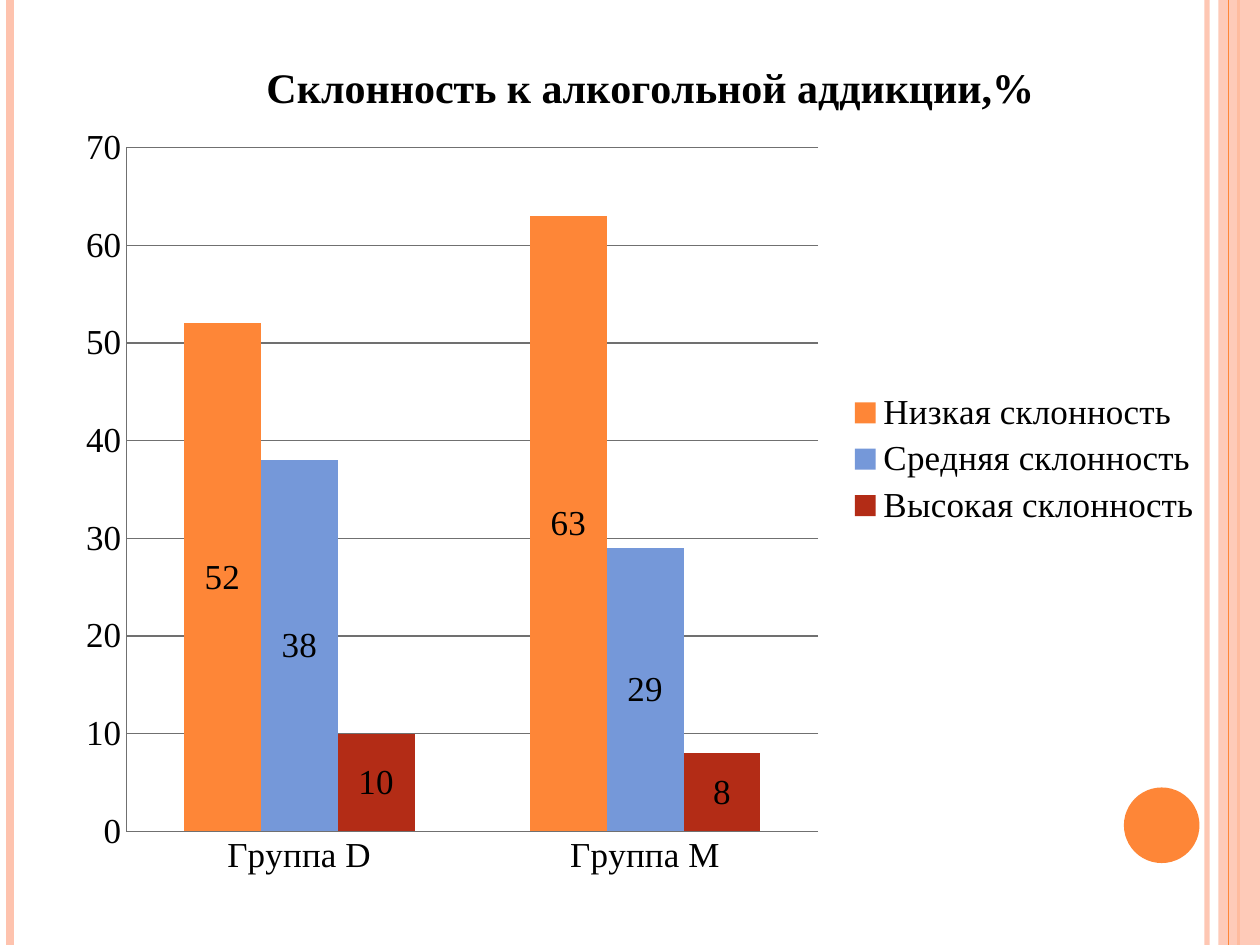
from lxml.etree import SubElement as Sub
from pptx import Presentation
from pptx.chart.data import CategoryChartData as Data
from pptx.dml.color import RGBColor
from pptx.enum.chart import XL_CHART_TYPE as Kind, XL_LABEL_POSITION as Pos
from pptx.enum.chart import XL_LEGEND_POSITION as Side, XL_TICK_MARK as Tick
from pptx.enum.shapes import MSO_CONNECTOR as Link, MSO_SHAPE as Form
from pptx.oxml import parse_xml
from pptx.oxml.ns import nsdecls, qn
from pptx.util import Inches, Pt

PEACH = RGBColor(0xFE, 0xC3, 0xAE)
ORANGE = RGBColor(0xFE, 0x86, 0x37)
BLUE = RGBColor(0x75, 0x98, 0xD9)
RED = RGBColor(0xB3, 0x2C, 0x16)
BLACK = RGBColor(0, 0, 0)
GREY = RGBColor(0x70, 0x70, 0x70)
FACE = "Times New Roman"


def style(font, size=20, bold=False):
    font.name, font.size, font.bold = FACE, Pt(size), bold
    font.color.rgb = BLACK


def fade(fill, share):
    color = fill._xPr.find(qn("a:solidFill"))[0]
    Sub(color, qn("a:alpha"), val=str(share * 1000))


deck = Presentation()
deck.slide_width, deck.slide_height = Inches(10), Inches(7.5)
wide, high = deck.slide_width, deck.slide_height
slide = deck.slides.add_slide(deck.slide_layouts[6])
shapes = slide.shapes

bars = [
    (0.958, PEACH, 3, 93),
    (0.008, PEACH, 4.5, 100),
    (0.983, ORANGE, 1.5, 100),
    (0.975, ORANGE, 0.75, 100),
]
for share, color, width, alpha in bars:
    if share == 0.975:
        band = shapes.add_shape(Form.RECTANGLE, int(wide * 0.967), 0, int(wide * 0.033), high)
        band.shadow.inherit = False
        band.fill.solid()
        band.fill.fore_color.rgb = PEACH
        fade(band.fill, 87)
        band.line.fill.background()
    left = int(wide * share)
    bar = shapes.add_connector(Link.STRAIGHT, left, 0, left, high)
    bar.line.color.rgb = color
    bar.line.width = Pt(width)
    if alpha < 100:
        fade(bar.line.fill, alpha)
    Sub(bar._element.spPr, qn("a:effectLst"))

dot = shapes.add_shape(Form.OVAL, Inches(8.92), Inches(6.25), Inches(0.6), Inches(0.6))
dot.shadow.inherit = False
dot.fill.solid()
dot.fill.fore_color.rgb = ORANGE
dot.line.fill.background()

rows = [
    ("Низкая склонность", (52, 63), ORANGE),
    ("Средняя склонность", (38, 29), BLUE),
    ("Высокая склонность", (10, 8), RED),
]
data = Data()
data.categories = ["Группа D", "Группа M"]
for name, vals, color in rows:
    data.add_series(name, vals)
chart = shapes.add_chart(
    Kind.COLUMN_CLUSTERED, Inches(0.5), Inches(0.21), Inches(9.15), Inches(6.87), data
).chart
chart.font.name, chart.font.size = "Cambria", Pt(10)
chart.font.color.rgb = BLACK

chart.has_title = True
run = chart.chart_title.text_frame.paragraphs[0].add_run()
run.text = "Склонность к алкогольной аддикции,%"
style(run.font, 24, True)
chart.chart_title.include_in_layout = False

chart.has_legend = True
chart.legend.position = Side.RIGHT
chart.legend.include_in_layout = False
style(chart.legend.font)

for axis in (chart.category_axis, chart.value_axis):
    axis.major_tick_mark = axis.minor_tick_mark = Tick.NONE
    axis.format.line.color.rgb = GREY
    axis.format.line.width = Pt(0.75)
    style(axis.tick_labels.font)
scale = chart.value_axis
scale.minimum_scale, scale.maximum_scale, scale.major_unit = 0, 70, 10
grid = scale.major_gridlines.format.line
grid.color.rgb = GREY
grid.width = Pt(0.75)

plot = chart.plots[0]
plot.gap_width, plot.overlap = 150, 0
plot.vary_by_categories = False
for item, (name, vals, color) in zip(plot.series, rows):
    item.format.fill.solid()
    item.format.fill.fore_color.rgb = color
    tags = item.data_labels
    tags.show_value = True
    tags.position = Pos.CENTER
    style(tags.font)

root = chart._chartSpace.chart
spots = [
    (root.find(qn("c:title")), 1, {"x": 0.17, "y": 0.03}),
    (root.plotArea, 0, {"x": 0.055, "y": 0.14, "w": 0.6, "h": 0.79}),
]
for part, place, box in spots:
    for old in part.findall(qn("c:layout")):
        part.remove(old)
    frame = parse_xml(f"<c:layout {nsdecls('c')}><c:manualLayout/></c:layout>")
    if "w" in box:
        Sub(frame[0], qn("c:layoutTarget"), val="inner")
    for key in "xy":
        Sub(frame[0], qn(f"c:{key}Mode"), val="edge")
    for key, share in box.items():
        Sub(frame[0], qn(f"c:{key}"), val=str(share))
    part.insert(place, frame)

deck.save("out.pptx")
